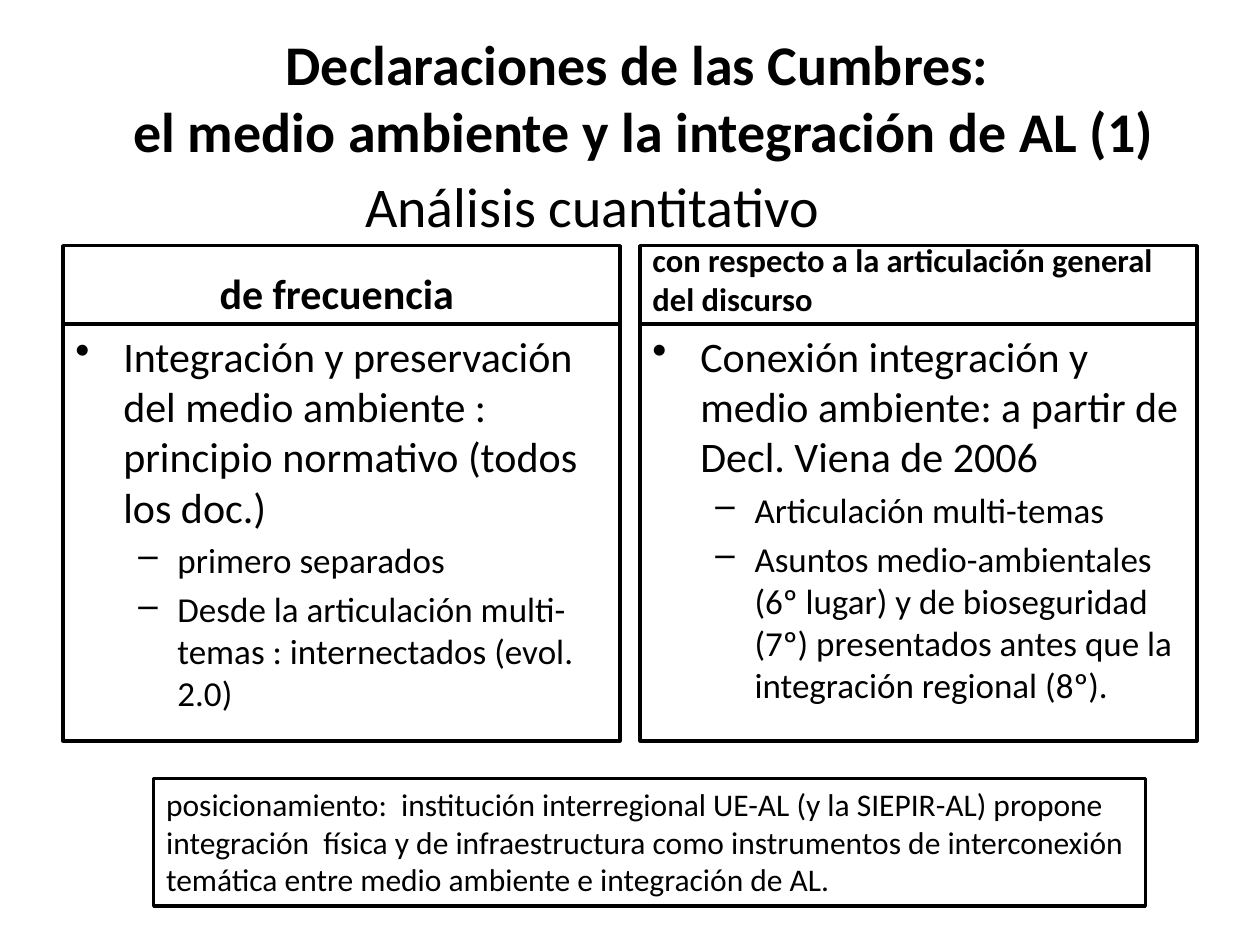
from dataclasses import dataclass

from lxml.etree import SubElement
from pptx import Presentation
from pptx.dml.color import RGBColor
from pptx.enum.shapes import MSO_SHAPE
from pptx.enum.text import MSO_ANCHOR, PP_ALIGN
from pptx.oxml.ns import qn
from pptx.util import Inches, Pt


@dataclass(frozen=True)
class Theme:
    font: str = "Calibri"
    ink: RGBColor = RGBColor(0, 0, 0)
    paper: RGBColor = RGBColor(255, 255, 255)
    border: float = 2
    title: float = 32
    heading: float = 24
    long_heading: float = 18.6
    levels: tuple = (24, 20)
    note: float = 18
    space_before: float = 0.2  # share of the type size


THEME = Theme()

TITLE = "Declaraciones de las Cumbres: \vel medio ambiente y la integración de AL (1)"
SUBTITLE = "Análisis cuantitativo"
COLUMNS = [
    {
        "heading": "de frecuencia ",
        "size": THEME.heading,
        "align": PP_ALIGN.CENTER,
        "points": [
            (0, "Integración y preservación del medio ambiente : principio normativo (todos los doc.)"),
            (1, "primero separados"),
            (1, "Desde la articulación multi-temas : internectados (evol. 2.0)"),
        ],
    },
    {
        "heading": "con respecto a la articulación general del discurso",
        "size": THEME.long_heading,
        "align": PP_ALIGN.LEFT,
        "points": [
            (0, "Conexión integración y medio ambiente: a partir de Decl. Viena de 2006"),
            (1, "Articulación multi-temas"),
            (1, "Asuntos medio-ambientales (6º lugar) y de bioseguridad (7º) "
                "presentados antes que la integración regional (8º)."),
        ],
    },
]
NOTE = ("posicionamiento:  institución interregional UE-AL (y la SIEPIR-AL) propone "
        "integración  física y de infraestructura como instrumentos de interconexión "
        "temática entre medio ambiente e integración de AL.")

BULLETS = [("•", 0.38, -0.38), ("–", 0.81, -0.31)]  # mark, margin, indent

WIDTH, HEIGHT = 10, 7.5
MARGIN, GUTTER = 0.5, 0.16
COLUMN_WIDTH = (WIDTH - 2 * MARGIN - GUTTER) / 2
HEADING_TOP, HEADING_HEIGHT, BODY_HEIGHT = 1.95, 0.62, 3.31


def add_text_area(slide, box, anchor=MSO_ANCHOR.TOP, framed=False):
    """Add a text box, or an outlined rectangle, and return its text frame."""
    place = [Inches(length) for length in box]
    if framed:
        area = slide.shapes.add_shape(MSO_SHAPE.RECTANGLE, *place)
        area.shadow.inherit = False
        area.fill.solid()
        area.fill.fore_color.rgb = THEME.paper
        area.line.color.rgb = THEME.ink
        area.line.width = Pt(THEME.border)
    else:
        area = slide.shapes.add_textbox(*place)
    frame = area.text_frame
    frame.word_wrap = True
    frame.vertical_anchor = anchor
    return frame


def write(paragraph, text, size, bold=False, align=PP_ALIGN.LEFT, spaced=False):
    paragraph.text = text
    paragraph.alignment = align
    font = paragraph.font
    font.name, font.size, font.bold = THEME.font, Pt(size), bold
    font.color.rgb = THEME.ink
    if spaced:
        paragraph.space_before = Pt(size * THEME.space_before)


def add_bullet(paragraph, level):
    mark, margin, indent = BULLETS[level]
    paragraph.level = level
    properties = paragraph._p.get_or_add_pPr()
    properties.set("marL", str(Inches(margin)))
    properties.set("indent", str(Inches(indent)))
    bullet = SubElement(properties, qn("a:buChar"))
    bullet.set("char", mark)
    defaults = properties.find(qn("a:defRPr"))
    defaults.addprevious(bullet)


def add_column(slide, index, column):
    left = MARGIN + index * (COLUMN_WIDTH + GUTTER)
    heading = add_text_area(slide, (left, HEADING_TOP, COLUMN_WIDTH, HEADING_HEIGHT),
                            MSO_ANCHOR.BOTTOM, framed=True)
    write(heading.paragraphs[0], column["heading"], column["size"],
          bold=True, align=column["align"], spaced=True)

    body = add_text_area(slide, (left, HEADING_TOP + HEADING_HEIGHT, COLUMN_WIDTH, BODY_HEIGHT),
                         framed=True)
    for position, (level, text) in enumerate(column["points"]):
        point = body.add_paragraph() if position else body.paragraphs[0]
        write(point, text, THEME.levels[level], spaced=True)
        add_bullet(point, level)


def main():
    deck = Presentation()
    deck.slide_width, deck.slide_height = Inches(WIDTH), Inches(HEIGHT)
    slide = deck.slides.add_slide(deck.slide_layouts[6])

    title = add_text_area(slide, (MARGIN, 0.3, 9.22, 0.93), MSO_ANCHOR.MIDDLE)
    write(title.paragraphs[0], TITLE, THEME.title, bold=True, align=PP_ALIGN.CENTER)

    for index, column in enumerate(COLUMNS):
        add_column(slide, index, column)

    subtitle = add_text_area(slide, (2.8, 1.31, 4.02, 0.64))
    write(subtitle.paragraphs[0], SUBTITLE, THEME.title)

    note = add_text_area(slide, (1.22, 6.18, 7.87, 1.01), framed=True)
    write(note.paragraphs[0], NOTE, THEME.note)

    deck.save("out.pptx")


if __name__ == "__main__":
    main()
